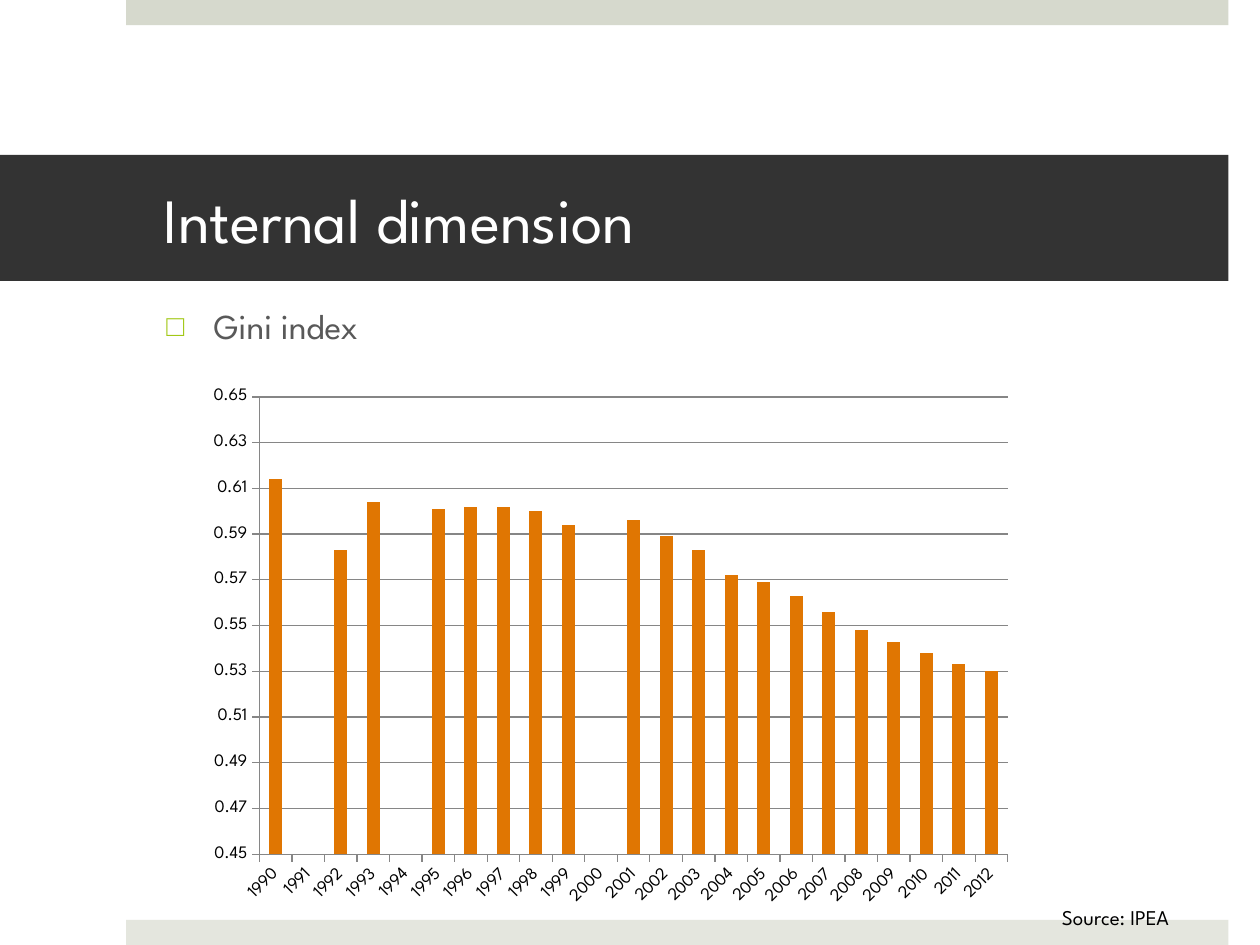
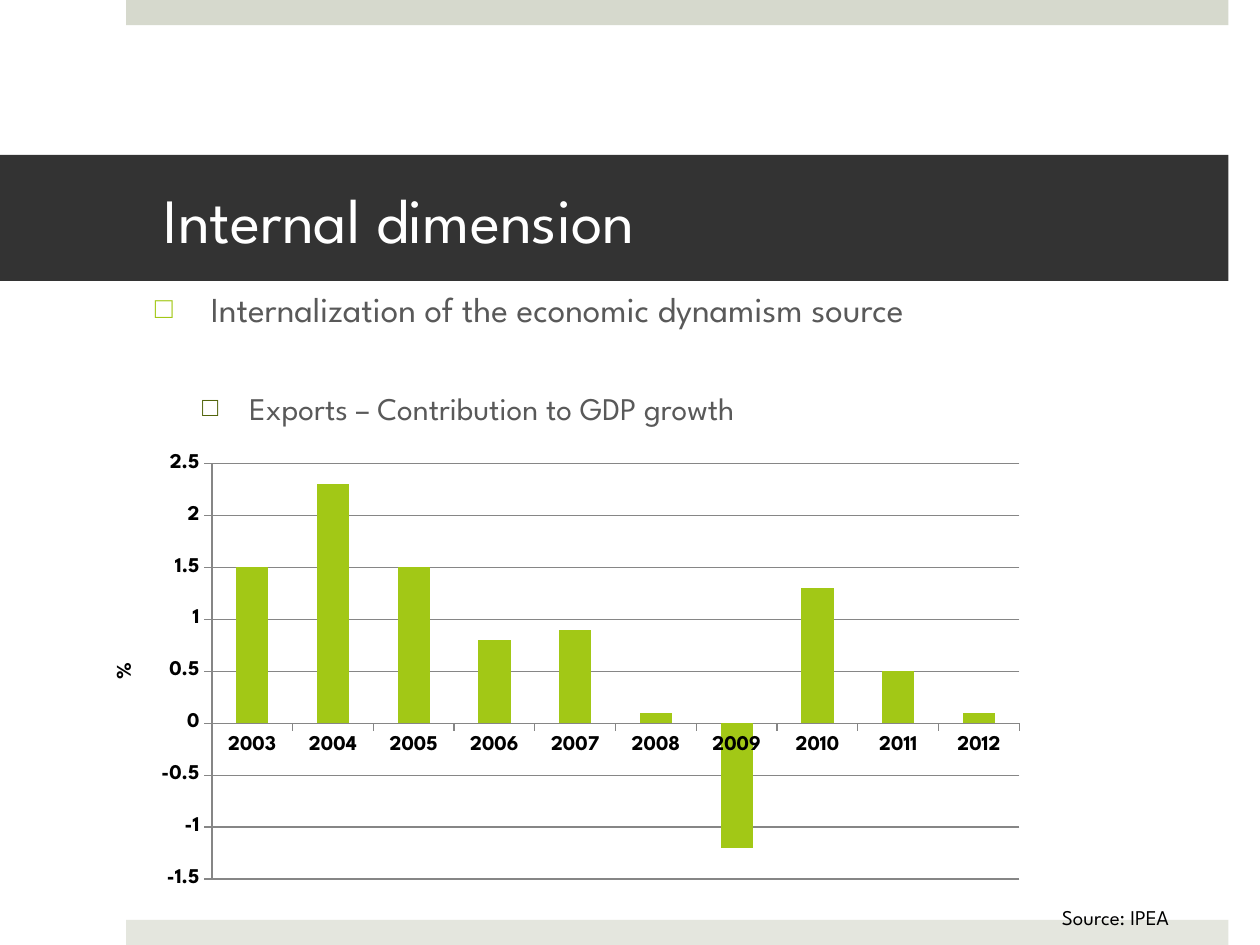
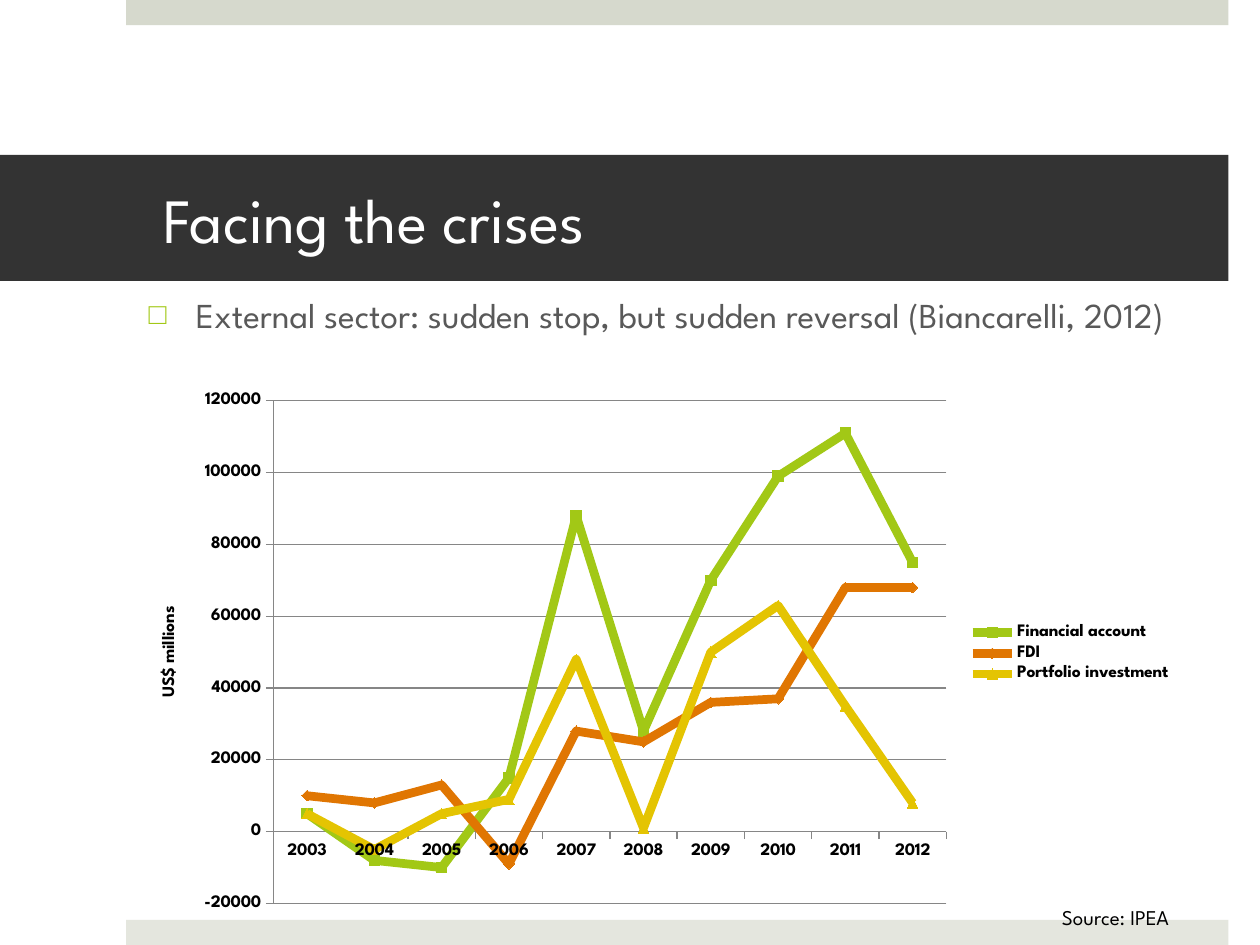
import lxml.etree
import pptx
import pptx.chart.data
import pptx.dml.color
import pptx.enum.chart
import pptx.enum.shapes
import pptx.enum.text
import pptx.oxml.ns
import pptx.util

FONT = "League Spartan"
WHITE, BLACK, DARK, GRAY = "FFFFFF", "000000", "333333", "595959"
GREEN, OLIVE, ORANGE, GOLD = "A2C816", "51640B", "E07602", "E4C402"
GRID = "868686"
UNIT = pptx.util.Inches(1)  # one column or row of the 10 x 7.5 grid
KIND = pptx.enum.chart.XL_CHART_TYPE
MARK = pptx.enum.chart.XL_MARKER_STYLE
qn = pptx.oxml.ns.qn


def color(code):
    return pptx.dml.color.RGBColor.from_string(code)


def cells(*box):
    return [round(n * UNIT) for n in box]


def move(shape, box):
    shape.left, shape.top, shape.width, shape.height = cells(*box)


def paint(item, code):
    item.fill.solid()
    item.fill.fore_color.rgb = color(code)


def style(font, size, code, bold=False):
    font.name, font.size, font.bold = FONT, pptx.util.Pt(size), bold
    font.color.rgb = color(code)


def write(par, text, size, code, bold=False):
    run = par.add_run()
    run.text = text
    style(run.font, size, code, bold)


# Slide parts

def add_bands(deck, slide):
    """Put the top and bottom bands on the master, behind all slides."""
    tree = deck.slide_master.shapes.element
    for row, code in ((0, "D6D9CD"), (7.3, "E4E6DE")):
        band = slide.shapes.add_shape(
            pptx.enum.shapes.MSO_SHAPE.RECTANGLE, *cells(1, row, 8.75, 0.2))
        band.shadow.inherit = False
        paint(band, code)
        band.line.fill.background()
        tree.insert(2, band.element)


def add_title(slide, text):
    title = slide.shapes.title
    move(title, (0, 1.23, 9.75, 1))
    paint(title, DARK)
    frame = title.text_frame
    frame.auto_size = pptx.enum.text.MSO_AUTO_SIZE.NONE
    frame.vertical_anchor = pptx.enum.text.MSO_ANCHOR.MIDDLE
    (frame.margin_left, frame.margin_top,
     frame.margin_right, frame.margin_bottom) = cells(1.3, 0.05, 0.3, 0.05)
    par = frame.paragraphs[0]
    par.alignment = pptx.enum.text.PP_ALIGN.LEFT
    write(par, text, 36, WHITE)


def add_bullet(par, left, code):
    props = par._p.get_or_add_pPr()
    props.set("marL", str(round(left * UNIT)))
    props.set("indent", str(round(-0.375 * UNIT)))
    tint = lxml.etree.SubElement(props, qn("a:buClr"))
    lxml.etree.SubElement(tint, qn("a:srgbClr"), val=code)
    lxml.etree.SubElement(props, qn("a:buSzPct"), val="85000")
    lxml.etree.SubElement(props, qn("a:buChar"), char="□")


def add_list(slide, box, lines):
    """Fill the body; each line is (text, level, space before)."""
    body = slide.placeholders[1]
    move(body, box)
    frame = body.text_frame
    frame.auto_size = pptx.enum.text.MSO_AUTO_SIZE.NONE
    for num, (text, level, gap) in enumerate(lines):
        par = frame.add_paragraph() if num else frame.paragraphs[0]
        par.level = level
        par.space_before = pptx.util.Pt(gap)
        add_bullet(par, 0.375 * (level + 1), (GREEN, OLIVE)[level])
        write(par, text, 20 - 2 * level, GRAY)


def add_source(slide):
    frame = slide.shapes.add_textbox(*cells(8.33, 7.13, 1.21, 0.3)).text_frame
    frame.word_wrap = False
    frame.auto_size = pptx.enum.text.MSO_AUTO_SIZE.SHAPE_TO_FIT_TEXT
    write(frame.paragraphs[0], "Source: IPEA", 12, BLACK)


# Charts

def spin(chart, query, angle):
    for body in chart.element.xpath(query):
        body.set("rot", str(angle * 60000))
        body.set("vert", "horz")


def set_plot(chart, box, plot):
    """Fix the inner plot area, given on the slide's grid."""
    area = chart.element.xpath("c:chart/c:plotArea")[0]
    for old in area.findall(qn("c:layout")):
        area.remove(old)
    layout = lxml.etree.Element(qn("c:layout"))
    area.insert(0, layout)
    manual = lxml.etree.SubElement(layout, qn("c:manualLayout"))
    parts = {"layoutTarget": "inner", "xMode": "edge", "yMode": "edge",
             "x": (plot[0] - box[0]) / box[2],
             "y": (plot[1] - box[1]) / box[3],
             "w": plot[2] / box[2], "h": plot[3] / box[3]}
    for name, val in parts.items():
        if name in "xywh":
            val = f"{val:.3f}"
        lxml.etree.SubElement(manual, qn("c:" + name), val=val)


def add_chart(slide, kind, box, plot, cats, rows, scale, size, bold=True,
              label=None, form="General"):
    """Rows are (name, values); scale is (low, high, step)."""
    data = pptx.chart.data.CategoryChartData()
    data.categories = cats
    for name, vals in rows:
        data.add_series(name, vals)
    chart = slide.shapes.add_chart(kind, *cells(*box), data).chart
    chart.has_title = chart.has_legend = False
    style(chart.font, size, BLACK, bold)
    chart.plots[0].vary_by_categories = False
    set_plot(chart, box, plot)

    axis = chart.value_axis
    axis.minimum_scale, axis.maximum_scale, axis.major_unit = scale
    axis.has_major_gridlines = True
    axis.tick_labels.number_format = form
    axis.tick_labels.number_format_is_linked = False
    lines = [axis.major_gridlines.format.line]
    for side in (axis, chart.category_axis):
        side.major_tick_mark = pptx.enum.chart.XL_TICK_MARK.OUTSIDE
        side.minor_tick_mark = pptx.enum.chart.XL_TICK_MARK.NONE
        style(side.tick_labels.font, size, BLACK, bold)
        lines.append(side.format.line)
    for line in lines:
        line.color.rgb = color(GRID)
        line.width = pptx.util.Pt(0.75)
    if label:
        write(axis.axis_title.text_frame.paragraphs[0], label, size, BLACK, bold)
        spin(chart, ".//c:valAx/c:title//a:bodyPr", -90)
    return chart


def add_bars(slide, code, *args, **opts):
    chart = add_chart(slide, KIND.COLUMN_CLUSTERED, *args, **opts)
    chart.plots[0].gap_width = 150
    bars = chart.plots[0].series[0]
    bars.invert_if_negative = False
    paint(bars.format, code)
    return chart


def add_lines(slide, looks, *args, **opts):
    chart = add_chart(slide, KIND.LINE_MARKERS, *args, **opts)
    for row, (code, mark) in zip(chart.plots[0].series, looks):
        row.smooth = False
        row.format.line.color.rgb = color(code)
        row.format.line.width = pptx.util.Pt(5)
        row.marker.style, row.marker.size = mark, 6
        paint(row.marker.format, code)
        row.marker.format.line.color.rgb = color(code)
    chart.has_legend = True
    chart.legend.position = pptx.enum.chart.XL_LEGEND_POSITION.RIGHT
    chart.legend.include_in_layout = False
    return chart


# Slides

def gini(slide):
    add_list(slide, (1.22, 2.37, 8.32, 4.01), [("Gini index", 0, 20)])
    vals = [0.614, None, 0.583, 0.604, None, 0.601, 0.602, 0.602, 0.6, 0.594,
            None, 0.596, 0.589, 0.583, 0.572, 0.569, 0.563, 0.556, 0.548,
            0.543, 0.538, 0.533, 0.53]
    chart = add_bars(slide, ORANGE, (1.56, 3.01, 6.57, 4.27),
                     (2.06, 3.15, 5.94, 3.63), range(1990, 2013),
                     [("Series 1", vals)], (0.45, 0.65, 0.02), 10, bold=False)
    spin(chart, ".//c:catAx/c:txPr/a:bodyPr", -45)


def exports(slide):
    add_list(slide, (1.13, 2.23, 8.06, 3.27), [
        (" Internalization of the economic dynamism source", 0, 20),
        ("Exports – Contribution to GDP growth", 1, 34)])
    vals = [1.5, 2.3, 1.5, 0.8, 0.9, 0.1, -1.2, 1.3, 0.5, 0.1]
    add_bars(slide, GREEN, (0.7, 3.52, 7.55, 3.61), (1.68, 3.68, 6.41, 3.3),
             range(2003, 2013), [("Series 1", vals)], (-1.5, 2.5, 0.5), 12,
             label="%")


def crises(slide):
    add_list(slide, (1.08, 2.28, 8.32, 4.01), [
        ("External sector: sudden stop, but sudden reversal "
         "(Biancarelli, 2012)", 0, 20)])
    rows = [
        ("Financial account", [5000, -8000, -10000, 15000, 88000, 28000,
                               70000, 99000, 111000, 75000]),
        ("FDI", [10000, 8000, 13000, -9000, 28000, 25000,
                 36000, 37000, 68000, 68000]),
        ("Portfolio investment", [5000, -5000, 5000, 9000, 48000, 1000,
                                  50000, 63000, 35000, 8000])]
    looks = [(GREEN, MARK.SQUARE), (ORANGE, MARK.DIAMOND),
             (GOLD, MARK.TRIANGLE)]
    add_lines(slide, looks, (1.08, 3.04, 8.32, 4.29), (2.17, 3.18, 5.34, 3.99),
              [str(year) for year in range(2003, 2013)], rows,
              (-20000, 120000, 20000), 10, label="US$ millions", form="0")


def main():
    deck = pptx.Presentation()
    deck.slide_width, deck.slide_height = cells(10, 7.5)
    pages = [("Internal dimension", gini), ("Internal dimension", exports),
             ("Facing the crises", crises)]
    for num, (title, fill) in enumerate(pages):
        slide = deck.slides.add_slide(deck.slide_layouts[1])
        if num == 0:
            add_bands(deck, slide)
        add_title(slide, title)
        fill(slide)
        add_source(slide)
    deck.save("out.pptx")


if __name__ == "__main__":
    main()
